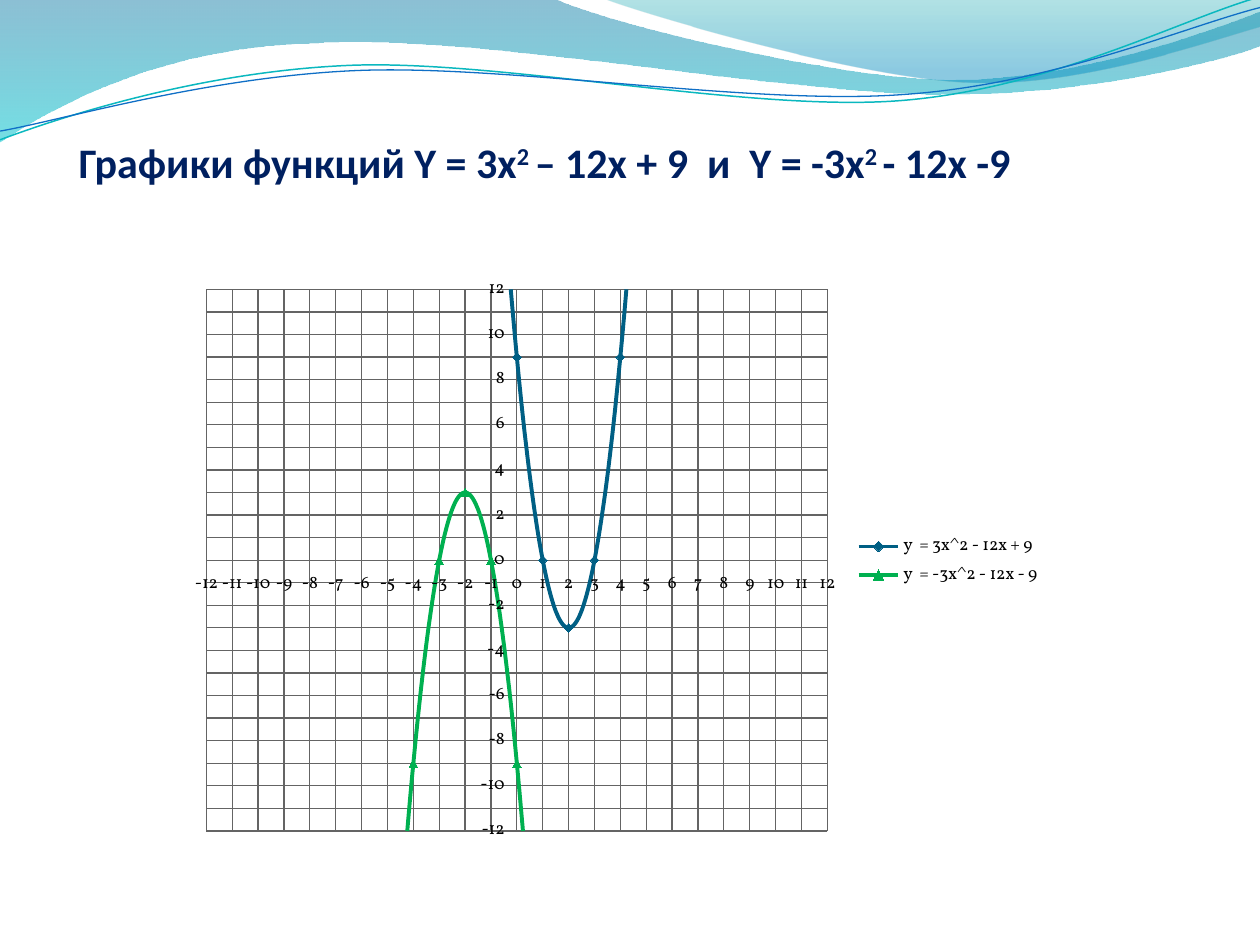
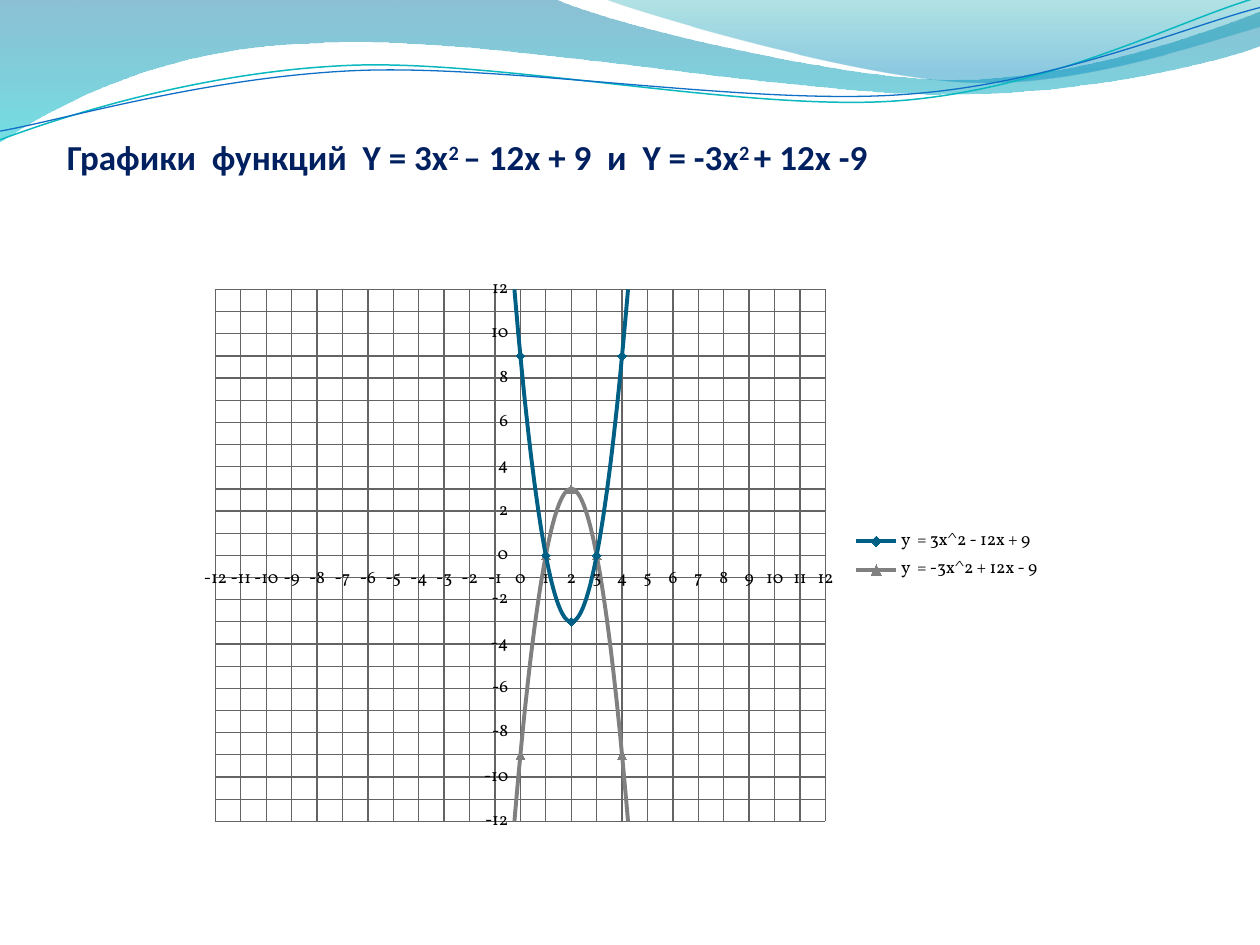
from dataclasses import dataclass
from typing import Any

from lxml import etree
from pptx import Presentation
from pptx import util as u
from pptx.chart.data import XyChartData
from pptx.dml.color import RGBColor
from pptx.enum import chart as charts
from pptx.enum import text
from pptx.oxml import parse_xml
from pptx.oxml.ns import nsdecls, qn

NAVY = RGBColor(0x00, 0x20, 0x60)
BLACK = RGBColor(0x00, 0x00, 0x00)
GRID_GRAY = RGBColor(0x64, 0x64, 0x64)
DEEP_TEAL = RGBColor(0x00, 0x5F, 0x84)
GREEN = RGBColor(0x00, 0xB0, 0x50)
GRAY = RGBColor(0x80, 0x80, 0x80)
WAVE_BLUE = RGBColor(0x00, 0x74, 0xA1)
WAVE_CYAN = RGBColor(0x00, 0xC6, 0xCF)
CREST_TEAL = RGBColor(0x00, 0xA1, 0xA9)
CREST_BLUE = RGBColor(0x00, 0x8B, 0xBF)
LINE_TEAL = RGBColor(0x0A, 0xB8, 0xBF)
LINE_BLUE = RGBColor(0x0F, 0x6F, 0xC6)

TITLE_FONT = "Calibri"
CHART_FONT = "Vollkorn"
POINT_COUNT = 11
AXIS_LIMIT = 12

Point = tuple[float, float]


@dataclass(frozen=True)
class Stop:
    position: float
    color: RGBColor
    opacity: int


@dataclass(frozen=True)
class Wave:
    start: Point
    segments: tuple[tuple[Point, ...], ...]
    stops: tuple[Stop, ...] = ()
    line_color: RGBColor | None = None
    line_width: float = 0


@dataclass(frozen=True)
class Parabola:
    name: str
    a: int
    b: int
    c: int
    first_x: int
    color: RGBColor
    marker: charts.XL_MARKER_STYLE

    def value(self, x: int) -> int:
        return self.a * x * x + self.b * x + self.c


@dataclass(frozen=True)
class Box:
    left: float
    top: float
    width: float
    height: float

    def lengths(self) -> tuple[u.Pt, ...]:
        return tuple(map(u.Pt, (self.left, self.top, self.width, self.height)))


@dataclass(frozen=True)
class GraphSlide:
    title_parts: tuple[str, ...]
    title_size: int
    title_box: Box
    chart_box: Box
    plot_box: Box
    parabolas: tuple[Parabola, ...]


WAVES = (
    Wave(
        (0, 0),
        (
            ((316.8, -0.7),),
            ((342.7, 12.2), (478.1, 45.4), (545.8, 45.4)),
            ((614.2, 45.4), (689.8, 18.7), (720, 6.5)),
            ((720.7, 25.9),),
            ((707.8, 31.7), (626.4, 54.7), (537.1, 54)),
            ((447.8, 54), (275, 20.2), (185, 24.5)),
            ((92.9, 25.9), (33.1, 59.8), (-0.7, 81.4)),
            ((0, 0),),
        ),
        stops=(Stop(0, WAVE_BLUE, 45), Stop(1, WAVE_CYAN, 55)),
    ),
    Wave(
        (344.9, -0.7),
        (
            ((366.5, 7.9), (491, 44.6), (553.7, 46.8)),
            ((616.3, 49.7), (691.9, 23), (720, 15.1)),
            ((720, 0),),
            ((344.9, -0.7),),
        ),
        stops=(Stop(0, CREST_TEAL, 30), Stop(0.8, CREST_BLUE, 45)),
    ),
    Wave(
        (0, 79.9),
        (
            ((34.6, 67), (113.8, 41), (199.4, 37.4)),
            ((284.4, 33.8), (427, 64.1), (513.4, 57.6)),
            ((599.8, 51.1), (675.4, 10.8), (718.6, -1.4)),
        ),
        line_color=LINE_TEAL,
        line_width=0.85,
    ),
    Wave(
        (0, 74.9),
        (
            ((33.8, 69.1), (118.1, 43.9), (203.8, 40.3)),
            ((290.2, 36.7), (429.8, 60.5), (516.2, 54)),
            ((601.9, 48.2), (677.5, 15.1), (720, 4.3)),
        ),
        line_color=LINE_BLUE,
        line_width=0.75,
    ),
)

UPWARD = Parabola(
    "y  = 3x^2 - 12x + 9", 3, -12, 9, -3, DEEP_TEAL, charts.XL_MARKER_STYLE.DIAMOND
)
LEFT_DOWNWARD = Parabola(
    "y  = -3x^2 - 12x - 9", -3, -12, -9, -7, GREEN, charts.XL_MARKER_STYLE.TRIANGLE
)
RIGHT_DOWNWARD = Parabola(
    "y  = -3x^2 + 12x - 9", -3, 12, -9, -3, GRAY, charts.XL_MARKER_STYLE.TRIANGLE
)

GRAPH_SLIDES = (
    GraphSlide(
        ("Графики функций Y = 3x", "2 ", "– 12x + 9  и  Y = -3x", "2 ", "- 12x -9"),
        24,
        Box(45, 16.6, 648, 90),
        Box(101.5, 152, 500.4, 337),
        Box(117.9, 165.4, 354.9, 309.5),
        (UPWARD, LEFT_DOWNWARD),
    ),
    GraphSlide(
        ("Графики  функций  Y = 3x", "2 ", "– 12x + 9  и  Y = -3x", "2 ", "+ 12x -9"),
        20,
        Box(38.2, 11.5, 648, 90),
        Box(106.5, 152, 495.4, 331.2),
        Box(123.1, 165.4, 348.6, 304),
        (UPWARD, RIGHT_DOWNWARD),
    ),
)


def apply_format(target: Any, values: dict[str, Any]) -> None:
    for name, value in values.items():
        setattr(target, name, value)


def style_font(font: Any, color: RGBColor, **values: Any) -> None:
    apply_format(font, values)
    font.color.rgb = color


def style_line(line: Any, color: RGBColor, width: float) -> None:
    line.color.rgb = color
    line.width = u.Pt(width)


def bend_segments(shape: Any, wave: Wave) -> None:
    lines = iter(list(shape._element.iter(qn("a:lnTo"))))
    for segment in wave.segments:
        first, *others = [next(lines) for _ in segment]
        if others:
            first.tag = qn("a:cubicBezTo")
        for line in others:
            first.append(line[0])
            line.getparent().remove(line)


def draw_wave(slide: Any, wave: Wave) -> None:
    points = [(u.Pt(x), u.Pt(y)) for segment in wave.segments for x, y in segment]
    builder = slide.shapes.build_freeform(*map(u.Pt, wave.start), scale=1.0)
    builder.add_line_segments(points, close=bool(wave.stops))
    shape = builder.convert_to_shape()
    bend_segments(shape, wave)
    shape.shadow.inherit = False
    if not wave.stops:
        shape.fill.background()
        style_line(shape.line, wave.line_color, wave.line_width)
        return
    shape.line.fill.background()
    shape.fill.gradient()
    shape.fill.gradient_angle = 270
    for gradient_stop, stop in zip(shape.fill.gradient_stops, wave.stops):
        gradient_stop.position = stop.position
        gradient_stop.color.rgb = stop.color
    for color, stop in zip(shape._element.iter(qn("a:srgbClr")), wave.stops):
        etree.SubElement(color, qn("a:alpha"), val=str(stop.opacity * 1000))


def draw_title(slide: Any, graph: GraphSlide) -> None:
    frame = slide.shapes.add_textbox(*graph.title_box.lengths()).text_frame
    apply_format(
        frame,
        {
            "word_wrap": True,
            "vertical_anchor": text.MSO_ANCHOR.BOTTOM,
            "margin_left": u.Pt(0),
            "margin_top": u.Pt(3.6),
            "margin_right": u.Pt(0),
            "margin_bottom": u.Pt(0),
        },
    )
    paragraph = frame.paragraphs[0]
    for index, part in enumerate(graph.title_parts):
        run = paragraph.add_run()
        run.text = part
        style_font(run.font, NAVY, name=TITLE_FONT, size=u.Pt(graph.title_size), bold=True)
        if index % 2:
            run._r.get_or_add_rPr().set("baseline", "30000")


def set_plot_layout(plot_area: Any, chart_box: Box, plot_box: Box) -> None:
    for layout in plot_area.findall(qn("c:layout")):
        plot_area.remove(layout)
    fractions = {
        "x": (plot_box.left - chart_box.left) / chart_box.width,
        "y": (plot_box.top - chart_box.top) / chart_box.height,
        "w": plot_box.width / chart_box.width,
        "h": plot_box.height / chart_box.height,
    }
    modes = "".join(f'<c:{key}Mode val="edge"/>' for key in "xy")
    sizes = "".join(f'<c:{key} val="{value:.4f}"/>' for key, value in fractions.items())
    plot_area.insert(
        0,
        parse_xml(
            f'<c:layout {nsdecls("c")}><c:manualLayout><c:layoutTarget val="inner"/>'
            f"{modes}{sizes}</c:manualLayout></c:layout>"
        ),
    )


def draw_chart(slide: Any, graph: GraphSlide) -> None:
    data = XyChartData()
    for parabola in graph.parabolas:
        series = data.add_series(parabola.name)
        for x in range(parabola.first_x, parabola.first_x + POINT_COUNT):
            series.add_data_point(x, parabola.value(x))
    chart = slide.shapes.add_chart(
        charts.XL_CHART_TYPE.XY_SCATTER_SMOOTH, *graph.chart_box.lengths(), data
    ).chart
    apply_format(chart, {"has_title": False, "has_legend": True})
    style_font(chart.font, BLACK, name=CHART_FONT, size=u.Pt(10))
    apply_format(
        chart.legend,
        {"position": charts.XL_LEGEND_POSITION.RIGHT, "include_in_layout": False},
    )
    for axis in (chart.category_axis, chart.value_axis):
        apply_format(
            axis,
            {
                "minimum_scale": -AXIS_LIMIT,
                "maximum_scale": AXIS_LIMIT,
                "major_unit": 1,
                "has_major_gridlines": True,
                "major_tick_mark": charts.XL_TICK_MARK.OUTSIDE,
                "tick_label_position": charts.XL_TICK_LABEL_POSITION.NEXT_TO_AXIS,
            },
        )
        for part in (axis, axis.major_gridlines):
            style_line(part.format.line, GRID_GRAY, 0.75)
    plot = chart.plots[0]
    plot.vary_by_categories = False
    for series, parabola in zip(plot.series, graph.parabolas):
        style_line(series.format.line, parabola.color, 2.25)
        apply_format(series.marker, {"style": parabola.marker, "size": 5})
        series.marker.format.fill.solid()
        series.marker.format.fill.fore_color.rgb = parabola.color
        style_line(series.marker.format.line, parabola.color, 0.75)
    for smooth in chart._chartSpace.iter(qn("c:smooth")):
        smooth.set("val", "1")
    set_plot_layout(chart._chartSpace.chart.plotArea, graph.chart_box, graph.plot_box)


def main() -> None:
    presentation = Presentation()
    apply_format(presentation, {"slide_width": u.Pt(720), "slide_height": u.Pt(540)})
    for graph in GRAPH_SLIDES:
        slide = presentation.slides.add_slide(presentation.slide_layouts[6])
        for wave in WAVES:
            draw_wave(slide, wave)
        draw_title(slide, graph)
        draw_chart(slide, graph)
    presentation.save("out.pptx")


if __name__ == "__main__":
    main()
